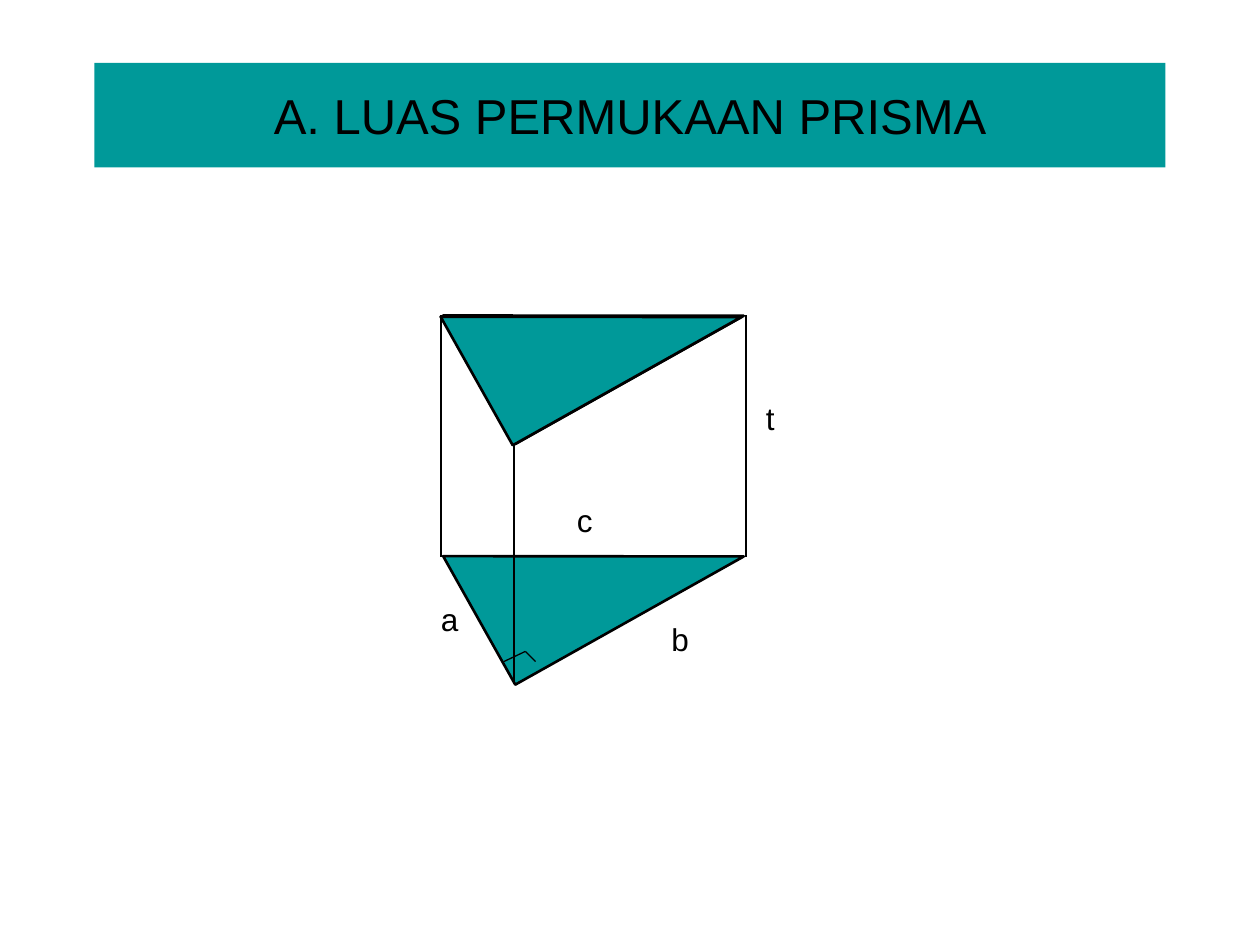
import pptx
import pptx.util
import pptx.dml.color
import pptx.enum.shapes
import pptx.enum.text
import pptx.oxml.ns
import lxml.etree

Inches = pptx.util.Inches
TEAL = pptx.dml.color.RGBColor(0x00, 0x99, 0x99)
BLACK = pptx.dml.color.RGBColor(0x00, 0x00, 0x00)
SHAPES = pptx.enum.shapes.MSO_SHAPE
PRISM_HEIGHT = 1.92


def write_text(frame, text, size=18, align=pptx.enum.text.PP_ALIGN.LEFT,
               anchor=pptx.enum.text.MSO_ANCHOR.TOP, wrap=False):
    """Write one formatted paragraph into a text frame."""
    frame.word_wrap = wrap
    frame.vertical_anchor = anchor
    paragraph = frame.paragraphs[0]
    paragraph.alignment = align
    run = paragraph.add_run()
    run.text = text
    run.font.name = "Arial"
    run.font.size = pptx.util.Pt(size)
    run.font.color.rgb = BLACK


def add_teal_shape(slide, kind, left, top, width, height):
    """Add a teal preset shape without a shadow or an outline."""
    shape = slide.shapes.add_shape(
        kind, Inches(left), Inches(top), Inches(width), Inches(height))
    shape.shadow.inherit = False
    shape.fill.solid()
    shape.fill.fore_color.rgb = TEAL
    shape.line.fill.background()
    return shape


def add_title(slide, text):
    """Add the title banner."""
    banner = add_teal_shape(slide, SHAPES.RECTANGLE, 0.75, 0.5, 8.5, 0.83)
    write_text(banner.text_frame, text, size=28, wrap=True,
               align=pptx.enum.text.PP_ALIGN.CENTER,
               anchor=pptx.enum.text.MSO_ANCHOR.MIDDLE)


def add_prism_face(slide, left, top):
    """Add a triangular face of the prism, turned so its long side is level."""
    face = add_teal_shape(slide, SHAPES.RIGHT_TRIANGLE, left, top, 2.08, 1.17)
    face.rotation = 330.7
    face.line.color.rgb = BLACK
    face.line.width = pptx.util.Pt(1.5)


def add_edge(slide, start, end, weight=1.5):
    """Add a straight black line between two points."""
    edge = slide.shapes.add_connector(
        pptx.enum.shapes.MSO_CONNECTOR.STRAIGHT,
        *(Inches(value) for value in (*start, *end)))
    edge.line.color.rgb = BLACK
    edge.line.width = pptx.util.Pt(weight)
    lxml.etree.SubElement(edge._element.spPr, pptx.oxml.ns.qn("a:effectLst"))


def add_label(slide, text, left, top, width):
    """Add the letter that names a side."""
    label = slide.shapes.add_textbox(
        Inches(left), Inches(top), Inches(width), Inches(0.4))
    write_text(label.text_frame, text)
    label.text_frame.auto_size = pptx.enum.text.MSO_AUTO_SIZE.SHAPE_TO_FIT_TEXT


def main():
    """Build the slide on the surface area of a prism."""
    deck = pptx.Presentation()
    deck.slide_width, deck.slide_height = Inches(10), Inches(7.5)
    slide = deck.slides.add_slide(deck.slide_layouts[6])

    add_title(slide, "A. LUAS PERMUKAAN PRISMA")
    for left, top in ((3.67, 3.83), (3.67, 1.92)):
        add_prism_face(slide, left, top)
    for x, top in ((4.08, 3.5), (3.5, 2.5), (5.92, 2.5)):
        add_edge(slide, (x, top), (x, top + PRISM_HEIGHT))

    right_angle = ((4, 5.25), (4.17, 5.17), (4.25, 5.25))
    for start, end in zip(right_angle, right_angle[1:]):
        add_edge(slide, start, end, weight=0.75)
    add_prism_face(slide, 3.65, 1.93)

    for text, left, top, width in (("a", 3.4, 4.71, 0.34),
                                   ("b", 5.23, 4.87, 0.34),
                                   ("c", 4.48, 3.93, 0.33),
                                   ("t", 5.98, 3.12, 0.27)):
        add_label(slide, text, left, top, width)
    deck.save("out.pptx")


if __name__ == "__main__":
    main()
